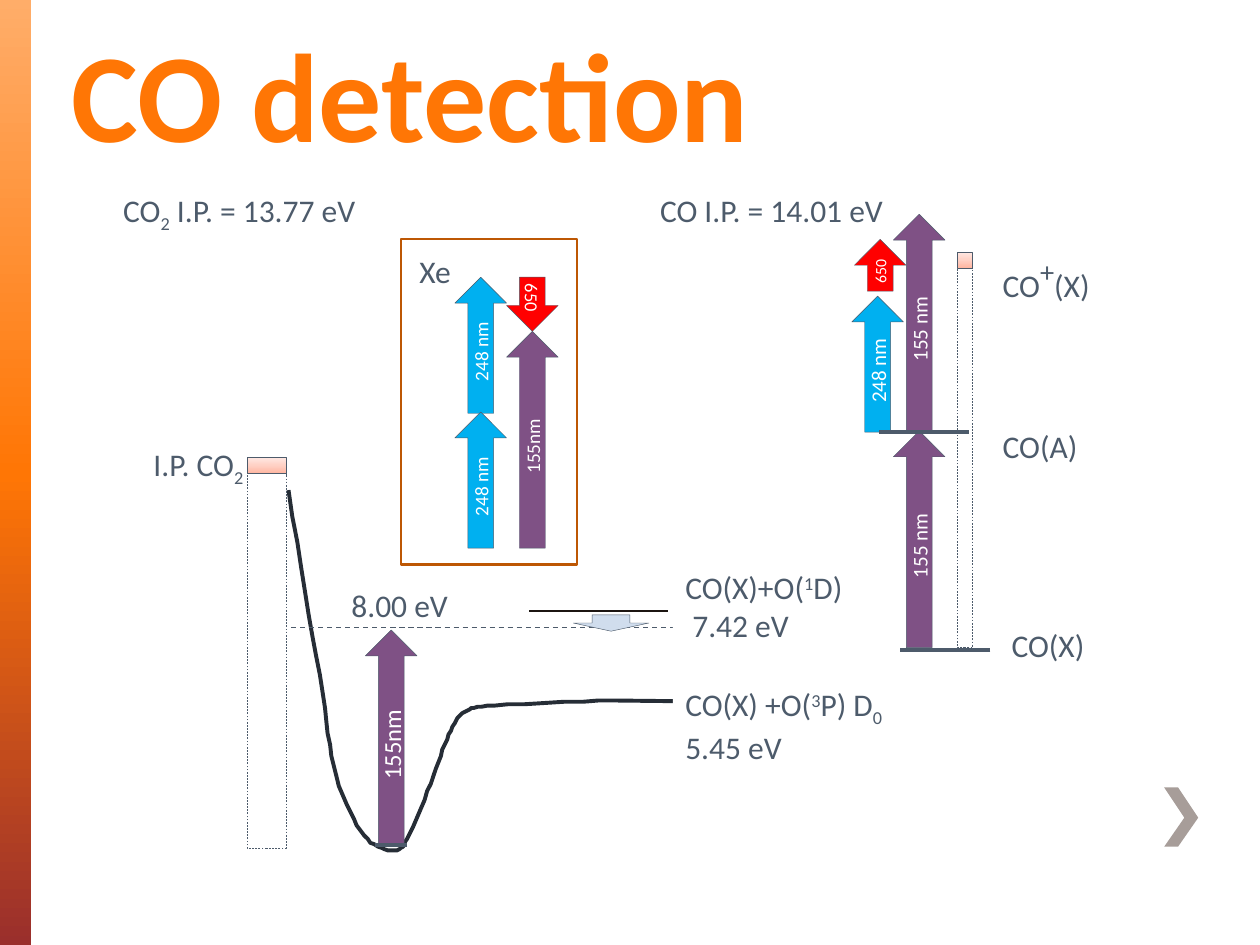
from copy import deepcopy
from pptx import Presentation
from pptx import util as u
from pptx.dml.color import RGBColor
from pptx.enum import dml, shapes, text
from pptx.oxml import ns
from lxml import etree

PX = 9144
FONT = "Calibri"
WHITE = RGBColor(0xFF, 0xFF, 0xFF)
SLATE = RGBColor(0x4D, 0x5B, 0x6B)
INK = RGBColor(0x26, 0x2D, 0x36)
BLACK = RGBColor(0x1C, 0x15, 0x11)
ORANGE = RGBColor(0xFF, 0x76, 0x05)
RUST = RGBColor(0xBD, 0x57, 0x04)
PEACH = RGBColor(0xFF, 0xAD, 0x69)
BRICK = RGBColor(0x9A, 0x2F, 0x2C)
PINKS = [RGBColor(0xFF, 0xB5, 0xA0), RGBColor(0xFF, 0xD1, 0xC5), RGBColor(0xFF, 0xE8, 0xE3)]
PURPLE = RGBColor(0x7F, 0x51, 0x85)
BLUE = RGBColor(0x00, 0xB0, 0xF0)
RED = RGBColor(0xFF, 0x00, 0x00)
PALE = RGBColor(0xD0, 0xDD, 0xED)
GREY = RGBColor(0xA7, 0x9D, 0x99)
RECT = shapes.MSO_SHAPE.RECTANGLE
DOWN = shapes.MSO_SHAPE.DOWN_ARROW
DASH = dml.MSO_LINE.DASH
SUB, SUP = -25000, 30000


def paint(item, fill=None, line=None, width=0.25, dash=None):
    item.shadow.inherit = False
    if fill is None:
        item.fill.background()
    else:
        item.fill.solid()
        item.fill.fore_color.rgb = fill
    if line is None:
        item.line.fill.background()
    else:
        item.line.color.rgb = line
        item.line.width = u.Pt(width)
        item.line.dash_style = dash


def block(slide, kind, box, **look):
    item = slide.shapes.add_shape(kind, *[v * PX for v in box])
    paint(item, **look)
    return item


def blend(item, tones, angle):
    item.fill.gradient()
    item.fill.gradient_angle = angle
    stops = item._element.spPr.find(".//" + ns.qn("a:gsLst"))
    stops.append(deepcopy(stops[0]))
    for stop, tone, place in zip(item.fill.gradient_stops, tones, (0, 0.5, 1)):
        stop.color.rgb = tone
        stop.position = place


def rule(slide, start, end, color=SLATE, width=2.25, dash=None):
    ends = [v * PX for v in (*start, *end)]
    line = slide.shapes.add_connector(shapes.MSO_CONNECTOR.STRAIGHT, *ends)
    line.line.color.rgb = color
    line.line.width = u.Pt(width)
    line.line.dash_style = dash
    etree.SubElement(line._element.spPr, ns.qn("a:effectLst"))


def style(run, size, color, bold=False):
    run.font.name = FONT
    run.font.size = u.Pt(size)
    run.font.color.rgb = color
    run.font.bold = bold


def label(slide, box, *lines, wrap=True, fill=None):
    item = slide.shapes.add_textbox(*[v * PX for v in box])
    frame = item.text_frame
    frame.word_wrap = wrap
    if fill is not None:
        item.fill.solid()
        item.fill.fore_color.rgb = fill
    for i, parts in enumerate(lines):
        para = frame.add_paragraph() if i else frame.paragraphs[0]
        for part in [parts] if isinstance(parts, str) else parts:
            word, base, size = (part, 0, 18) if isinstance(part, str) else part
            run = para.add_run()
            run.text = word
            style(run, size, SLATE)
            if base:
                run._r.get_or_add_rPr().set("baseline", str(base))


def photon(slide, box, fill, words, size, turn=180):
    item = block(slide, DOWN, box, fill=fill, line=SLATE)
    item.rotation = turn
    frame = item.text_frame
    frame.margin_top = frame.margin_bottom = 0
    frame.vertical_anchor = text.MSO_ANCHOR.MIDDLE
    frame._txBody.bodyPr.set("vert", "vert")
    para = frame.paragraphs[0]
    para.text = words
    para.alignment = text.PP_ALIGN.CENTER
    style(para.runs[0], size, WHITE)


def column(slide, x, y, w, h):
    block(slide, RECT, (x, y + 13, w, h - 13), line=SLATE, dash=DASH)
    blend(block(slide, RECT, (x, y, w, 13), line=SLATE), PINKS, 90)


def trace(slide, points, x, y, closed=False):
    spots = [(x + a, y + b) for a, b in points]
    form = slide.shapes.build_freeform(*spots[0], scale=PX)
    form.add_line_segments(spots[1:], close=closed)
    return form.convert_to_shape()


def bend(knots, steps=8):
    points = [knots[0]]
    for i in range(0, len(knots) - 1, 3):
        a, b, c, d = knots[i:i + 4]
        for n in range(1, steps + 1):
            t = n / steps
            s = 1 - t
            points.append(tuple(
                s**3 * p + 3 * s * s * t * q + 3 * s * t * t * r + t**3 * e
                for p, q, r, e in zip(a, b, c, d)))
    return points


def frame(slide, x, y, w, h):
    blend(block(slide, RECT, (x, y, 25, h)), [PEACH, ORANGE, BRICK], 270)
    mark = [(11, 0), (0, 0), (16, 24), (0, 47), (11, 47), (27, 24)]
    paint(trace(slide, mark, x + 924, y + 625, True), fill=GREY)


def title(slide, x, y, w, h):
    item = slide.shapes.add_textbox(*[v * PX for v in (x, y, w, h)])
    item.text_frame.text = "CO detection"
    item.text_frame.word_wrap = True
    item.text_frame.vertical_anchor = text.MSO_ANCHOR.BOTTOM
    style(item.text_frame.paragraphs[0].runs[0], 72, ORANGE, True)


def well(slide, x, y, w, h):
    label(slide, (x, y, 300, 40), ["CO", ("2", SUB, 18), " I.P. = 13.77 eV"])
    label(slide, (x + 181, y + 313, 98, 40), "8.00 eV", wrap=False)
    knots = [(0, 0), (9, 55), (18, 110), (25, 147), (31, 185), (32, 206), (38, 227),
             (44, 249), (53, 264), (60, 274), (67, 283), (75, 285), (81, 286),
             (87, 286), (89, 287), (94, 277), (100, 267), (110, 241), (115, 227),
             (121, 212), (124, 199), (129, 191), (133, 182), (135, 179), (140, 176),
             (146, 173), (145, 172), (164, 171), (184, 169), (258, 167), (258, 167)]
    curve = trace(slide, bend(knots) + [(346, 168)], x + 141, y + 242)
    paint(curve, line=INK, width=2.25)
    rule(slide, (x + 143, y + 351), (x + 509, y + 351), width=0.75, dash=DASH)
    photon(slide, (x + 202, y + 353, 41, 172), PURPLE, "155nm", 14)
    column(slide, x + 108, y + 216, 31, 310)
    label(slide, (x + 24, y + 201, 93, 40), ["I.P. CO", ("2", SUB, 18)], wrap=False)
    rule(slide, (x + 235, y + 524), (x + 210, y + 524))
    block(slide, DOWN, (x + 367, y + 341, 60, 13), fill=PALE, line=SLATE)
    label(slide, (x + 446, y + 299, 148, 91), ["CO(X)+O(", ("1", SUP, 18), "D)"],
          " 7.42 eV", wrap=False, fill=WHITE)
    label(slide, (x + 446, y + 392, 181, 71),
          ["CO(X) +O(", ("3", SUP, 18), "P) D", ("0", SUB, 18)],
          "5.45 eV", wrap=False, fill=WHITE)
    rule(slide, (x + 332, y + 338), (x + 442, y + 338), BLACK, 0.75)


def ladder(slide, x, y, w, h):
    label(slide, (x, y, 220, 40), "CO I.P. = 14.01 eV")
    column(slide, x + 246, y + 53, 12, 314)
    label(slide, (x + 279, y + 345, 91, 40), "CO(X)")
    label(slide, (x + 272, y + 187, 100, 40), "CO(A)")
    label(slide, (x + 272, y + 45, 92, 42), ["CO", ("+", SUP, 28), "(X)"])
    for step in range(2):
        photon(slide, (x + 195, y + 23 + step * 172, 41, 172), PURPLE, "155 nm", 12)
    photon(slide, (x + 162, y + 88, 41, 108), BLUE, "248 nm", 12)
    photon(slide, (x + 164, y + 43, 41, 41), RED, "650", 9)
    rule(slide, (x + 255, y + 196), (x + 184, y + 196))
    rule(slide, (x + 272, y + 369), (x + 200, y + 369))


def xenon(slide, x, y, w, h):
    photon(slide, (x + 84, y + 30, 41, 43), RED, "650", 10.5, 0)
    for step in range(2):
        photon(slide, (x + 43, y + 30 + step * 107, 41, 108), BLUE, "248 nm", 11)
    photon(slide, (x + 84, y + 73, 41, 172), PURPLE, "155nm", 11)
    label(slide, (x + 5, y + 5, 45, 40), "Xe", wrap=False)
    block(slide, RECT, (x, y, w, h), line=RUST, width=1.25)


def main():
    deck = Presentation()
    deck.slide_width, deck.slide_height = 1000 * PX, 750 * PX
    slide = deck.slides.add_slide(deck.slide_layouts[6])
    frame(slide, 0, 0, 1000, 750)
    well(slide, 88, 147, 627, 528)
    ladder(slide, 514, 147, 372, 385)
    title(slide, 47, 13, 792, 125)
    xenon(slide, 318, 190, 140, 258)
    deck.save("out.pptx")


if __name__ == "__main__":
    main()
